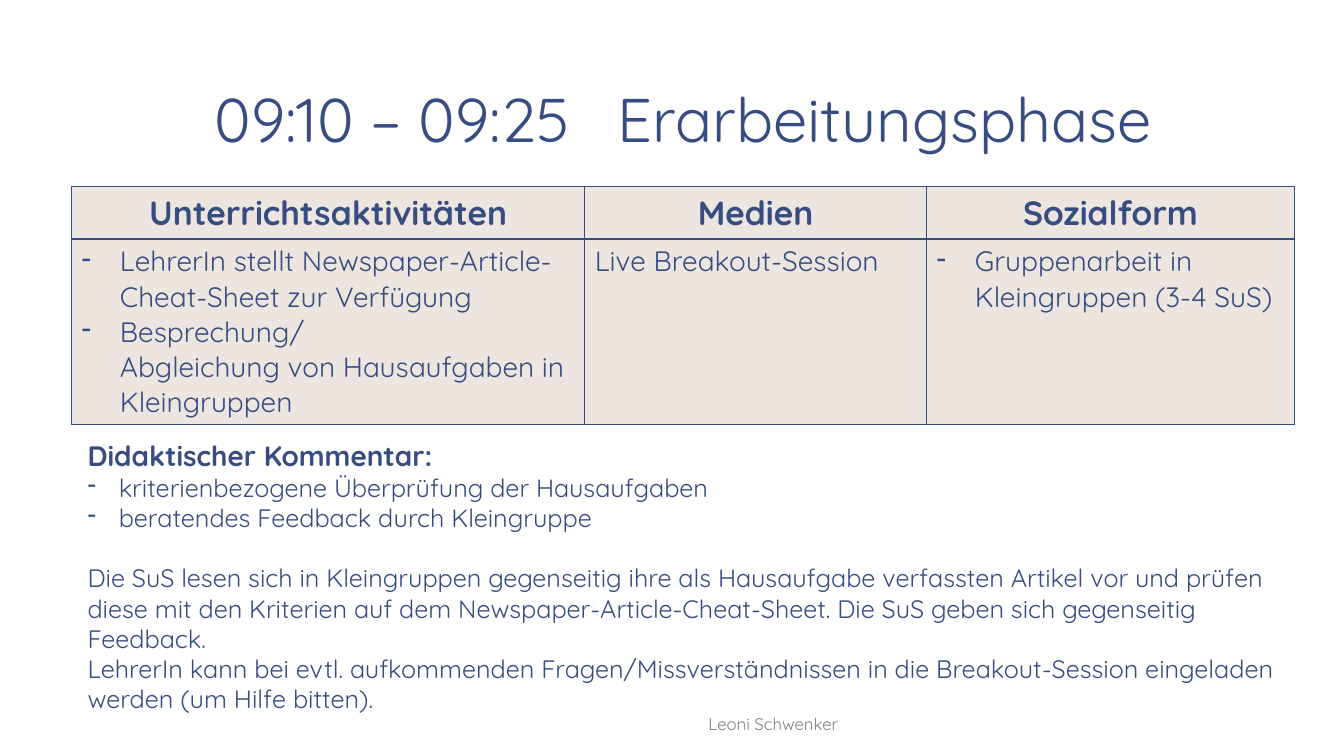
from dataclasses import dataclass

from lxml.etree import SubElement
from pptx import Presentation
from pptx.dml.color import RGBColor as RGB
from pptx.enum.text import MSO_ANCHOR as Anchor, PP_ALIGN as Align
from pptx.oxml.ns import qn
from pptx.util import Emu, Inches, Pt

SLIDE_W, SLIDE_H = 13.33, 7.5


@dataclass(frozen=True)
class Theme:
    font: str = "Quicksand"
    ink: str = "374C81"
    cell: str = "EDE5DF"
    muted: str = "808080"
    title: int = 44
    head: int = 24
    body: int = 20
    small: int = 18
    footer: int = 12
    gap: float = 21.6
    thin: int = 1
    thick: int = 2


THEME = Theme()
TITLE = "09:10 – 09:25\tErarbeitungsphase"
HEADERS = ["Unterrichtsaktivitäten", "Medien", "Sozialform"]
ACTIVITIES = [
    ["LehrerIn stellt Newspaper-Article-Cheat-Sheet zur Verfügung",
     "Besprechung/\vAbgleichung von Hausaufgaben in Kleingruppen"],
    ["Live Breakout-Session"],
    ["Gruppenarbeit in Kleingruppen (3-4 SuS)"],
]
DASHED = [True, False, True]
COMMENT_HEAD = "Didaktischer Kommentar:"
COMMENT_POINTS = [
    "kriterienbezogene Überprüfung der Hausaufgaben",
    "beratendes Feedback durch Kleingruppe",
]
COMMENT_TEXT = [
    "Die SuS lesen sich in Kleingruppen gegenseitig ihre als Hausaufgabe "
    "verfassten Artikel vor und prüfen diese mit den Kriterien auf dem "
    "Newspaper-Article-Cheat-Sheet. Die SuS geben sich gegenseitig Feedback.",
    "LehrerIn kann bei evtl. aufkommenden Fragen/Missverständnissen in die "
    "Breakout-Session eingeladen werden (um Hilfe bitten).",
]


def add_dash(p, indent):
    pPr = p._p.get_or_add_pPr()
    pPr.set("marL", str(Inches(indent)))
    pPr.set("indent", str(-Inches(indent)))
    SubElement(pPr, qn("a:buChar")).set("char", "-")


def write(tf, items):
    for i, (text, size, fmt) in enumerate(items):
        p = tf.paragraphs[0] if i == 0 else tf.add_paragraph()
        p.text = text
        for name, value in fmt.get("para", {}).items():
            setattr(p, name, value)
        if "dash" in fmt:
            add_dash(p, fmt["dash"])
        font_values = {"name": THEME.font, "size": Pt(size), "bold": fmt.get("bold", False)}
        for r in p.runs:
            for name, value in font_values.items():
                setattr(r.font, name, value)
            r.font.color.rgb = RGB.from_string(fmt.get("color", THEME.ink))


def add_text(s, box, items, anchor=Anchor.TOP, inset=(0.1, 0.05)):
    tf = s.shapes.add_textbox(*map(Inches, box)).text_frame
    side, edge = map(Inches, inset)
    values = {"word_wrap": True, "vertical_anchor": anchor,
              "margin_left": side, "margin_right": side,
              "margin_top": edge, "margin_bottom": edge}
    for name, value in values.items():
        setattr(tf, name, value)
    write(tf, items)


def add_borders(cell, widths):
    tcPr = cell._tc.get_or_add_tcPr()
    for side, width in zip("LRTB", widths):
        ln = SubElement(tcPr, qn(f"a:ln{side}"), w=str(Pt(width)))
        fill = SubElement(ln, qn("a:solidFill"))
        SubElement(fill, qn("a:srgbClr"), val=THEME.ink)


def title(s, box):
    para = {"alignment": Align.CENTER, "line_spacing": 0.85}
    add_text(s, box, [(TITLE, THEME.title, {"para": para})], Anchor.BOTTOM, (0.13, 0.07))


def plan_table(s, box, col_widths, row_heights):
    table = s.shapes.add_table(2, 3, *map(Inches, box)).table
    for col, width in zip(table.columns, col_widths):
        col.width = Inches(width)
    for row, height in zip(table.rows, row_heights):
        row.height = Inches(height)
    head_fmt = {"bold": True, "para": {"alignment": Align.CENTER}}
    heads = [[(text, THEME.head, head_fmt)] for text in HEADERS]
    bodies = [[(text, THEME.body, {"dash": 0.38} if dashed else {}) for text in texts]
              for texts, dashed in zip(ACTIVITIES, DASHED)]
    thin, thick = THEME.thin, THEME.thick
    rows = [(heads, (thin, thin, thin, thick)), (bodies, (thin, thin, thick, thin))]
    for i, (cells, widths) in enumerate(rows):
        for j, items in enumerate(cells):
            cell = table.cell(i, j)
            add_borders(cell, widths)
            cell.fill.solid()
            cell.fill.fore_color.rgb = RGB.from_string(THEME.cell)
            write(cell.text_frame, items)


def comment(s, box):
    items = [(COMMENT_HEAD, THEME.body, {"bold": True})]
    items += [(text, THEME.small, {"dash": 0.31}) for text in COMMENT_POINTS]
    items += [(text, THEME.small, {"para": {"space_before": Pt(gap)}})
              for text, gap in zip(COMMENT_TEXT, (THEME.gap, 0))]
    add_text(s, box, items)


def footer(s, box):
    fmt = {"color": THEME.muted, "para": {"alignment": Align.CENTER}}
    add_text(s, box, [("Leoni Schwenker", THEME.footer, fmt)], Anchor.BOTTOM, (0.13, 0.07))


def main():
    prs = Presentation()
    prs.slide_width, prs.slide_height = Emu(Inches(SLIDE_W)), Emu(Inches(SLIDE_H))
    s = prs.slides.add_slide(prs.slide_layouts[6])
    title(s, (1.22, 0.08, 11.11, 1.53))
    plan_table(s, (0.71, 1.85, 12.13, 2.36), (5.09, 3.39, 3.65), (0.52, 1.84))
    comment(s, (0.77, 4.3, 12.13, 3.2))
    footer(s, (4.27, 7, 6.8, 0.35))
    prs.save("out.pptx")


if __name__ == "__main__":
    main()
